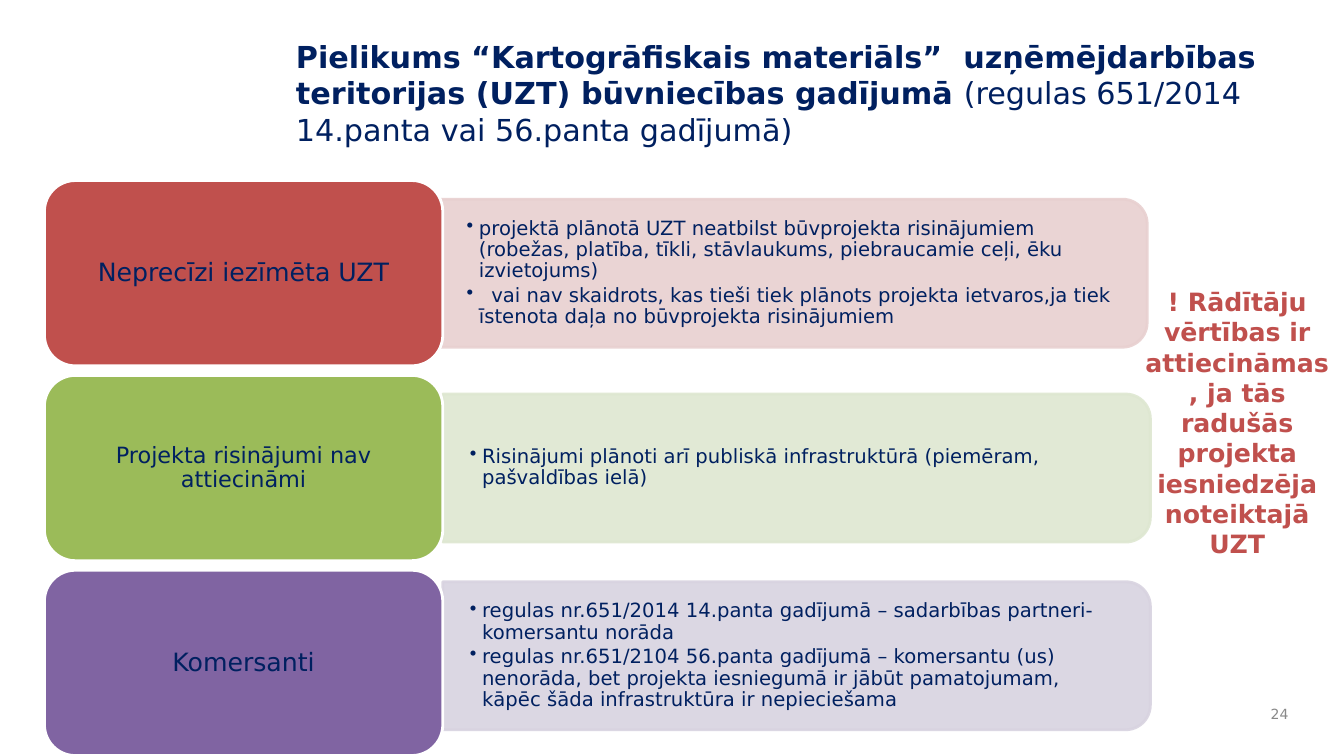
from lxml import etree
from pptx import Presentation
from pptx import util as u
from pptx.dml.color import RGBColor
from pptx.enum import shapes, text
from pptx.oxml.ns import qn

NAVY = RGBColor(0x00, 0x20, 0x60)
RED = RGBColor(0xC0, 0x50, 0x4D)
GREEN = RGBColor(0x9B, 0xBB, 0x59)
PURPLE = RGBColor(0x80, 0x64, 0xA2)
PINK = RGBColor(0xE8, 0xD0, 0xD0)
MINT = RGBColor(0xDE, 0xE7, 0xD1)
LILAC = RGBColor(0xD8, 0xD3, 0xE0)
WHITE = RGBColor(0xFF, 0xFF, 0xFF)
GREY = RGBColor(0x89, 0x89, 0x89)
FONT = "DejaVu Sans"

TITLE = [
    ("Pielikums “Kartogrāfiskais materiāls”  uzņēmējdarbības teritorijas "
     "(UZT) būvniecības gadījumā ", True),
    ("(regulas 651/2014 14.panta vai 56.panta gadījumā)", False),
]
NOTE = ("! Rādītāju vērtības ir attiecināmas, ja tās radušās projekta "
        "iesniedzēja noteiktajā UZT")
ROWS = [
    ("Neprecīzi iezīmēta UZT", 18, RED, PINK, -0.08, 0, [
        "projektā plānotā UZT neatbilst būvprojekta risinājumiem (robežas, "
        "platība, tīkli, stāvlaukums, piebraucamie ceļi, ēku izvietojums)",
        "  vai nav skaidrots, kas tieši tiek plānots projekta ietvaros,ja "
        "tiek īstenota daļa no būvprojekta risinājumiem"]),
    ("Projekta risinājumi nav attiecināmi", 16, GREEN, MINT, 0, 0, [
        "Risinājumi plānoti arī publiskā infrastruktūrā (piemēram, "
        "pašvaldības ielā)"]),
    ("Komersanti", 18, PURPLE, LILAC, 0, -0.18, [
        "regulas nr.651/2014 14.panta gadījumā – sadarbības partneri- "
        "komersantu norāda",
        "regulas nr.651/2104 56.panta gadījumā – komersantu (us) nenorāda, "
        "bet projekta iesniegumā ir jābūt pamatojumam, kāpēc šāda "
        "infrastruktūra ir nepieciešama"]),
]


def write(shape, paras, size=18, color=NAVY, align=text.PP_ALIGN.LEFT,
          anchor=text.MSO_ANCHOR.TOP, pad=(0.25, 0.13), space=None,
          after=0, bullet=False):
    frame = shape.text_frame
    frame.word_wrap = True
    frame.vertical_anchor = anchor
    frame.margin_left = frame.margin_right = u.Cm(pad[0])
    frame.margin_top = frame.margin_bottom = u.Cm(pad[1])
    for i, runs in enumerate(paras):
        para = frame.add_paragraph() if i else frame.paragraphs[0]
        para.alignment = align
        if space:
            para.line_spacing = space
        para.space_after = u.Pt(after)
        if bullet:
            props = para._p.get_or_add_pPr()
            props.set("marL", str(u.Cm(0.31)))
            props.set("indent", str(-u.Cm(0.31)))
            etree.SubElement(props, qn("a:buChar"), char="•")
        for words, bold in runs:
            run = para.add_run()
            run.text = words
            run.font.name = FONT
            run.font.size = u.Pt(size)
            run.font.bold = bold
            run.font.color.rgb = color


def box(slide, x, y, w, h):
    return slide.shapes.add_textbox(u.Cm(x), u.Cm(y), u.Cm(w), u.Cm(h))


def block(slide, kind, x, y, w, h, fill, line):
    shape = slide.shapes.add_shape(kind, u.Cm(x), u.Cm(y), u.Cm(w), u.Cm(h))
    shape.shadow.inherit = False
    shape.fill.solid()
    shape.fill.fore_color.rgb = fill
    shape.line.color.rgb = line
    shape.line.width = u.Pt(2)
    return shape


def panel(slide, x, y, w, h, tint, points):
    back = block(slide, shapes.MSO_SHAPE.ROUND_2_SAME_RECTANGLE,
                 x + (w - h) / 2, y + (h - w) / 2, h, w, tint, tint)
    back.rotation = 90
    for color in back._element.spPr.iter(qn("a:srgbClr")):
        etree.SubElement(color, qn("a:alpha"), val="90000")
    write(box(slide, x, y + 0.18, w - 0.18, h - 0.36),
          [[(point, False)] for point in points], size=14,
          anchor=text.MSO_ANCHOR.MIDDLE, pad=(0.68, 0.35),
          space=0.9, after=2.5, bullet=True)


def row(slide, x, y, w, h, item):
    label, size, fill, tint, dx, dy, points = item
    side = 10.04
    tall = 3.73
    left = x + side + dx
    panel(slide, left, y + (h - tall) / 2 + dy, w - side, tall, tint, points)
    card = block(slide, shapes.MSO_SHAPE.ROUNDED_RECTANGLE,
                 x, y, side, h, fill, WHITE)
    write(card, [[(label, False)]], size=size, align=text.PP_ALIGN.CENTER,
          anchor=text.MSO_ANCHOR.MIDDLE, pad=(0.18, 0.1), space=0.9)


def table(slide, x, y, w, h):
    gap = 0.24
    high = (h - gap * (len(ROWS) - 1)) / len(ROWS)
    for i, item in enumerate(ROWS):
        row(slide, x, y + i * (high + gap), w, high, item)


def head(slide, x, y, w, h):
    write(box(slide, x, y, w, h), [TITLE], size=21.6)


def aside(slide, x, y, w, h):
    write(box(slide, x, y, w, h), [[(NOTE, True)]], color=RED,
          align=text.PP_ALIGN.CENTER)


def number(slide, x, y, w, h):
    write(box(slide, x, y, w, h), [[("24", False)]], size=10, color=GREY,
          align=text.PP_ALIGN.RIGHT, anchor=text.MSO_ANCHOR.MIDDLE)


def main():
    deck = Presentation()
    deck.slide_width = u.Cm(33.87)
    deck.slide_height = u.Cm(19.05)
    slide = deck.slides.add_slide(deck.slide_layouts[6])
    head(slide, 7.21, 0.84, 25.53, 3.68)
    table(slide, 1.12, 4.55, 27.87, 14.49)
    number(slide, 31.6, 17.58, 1.12, 0.84)
    aside(slide, 28.5, 7.09, 5.36, 7.19)
    deck.save("out.pptx")


if __name__ == "__main__":
    main()
